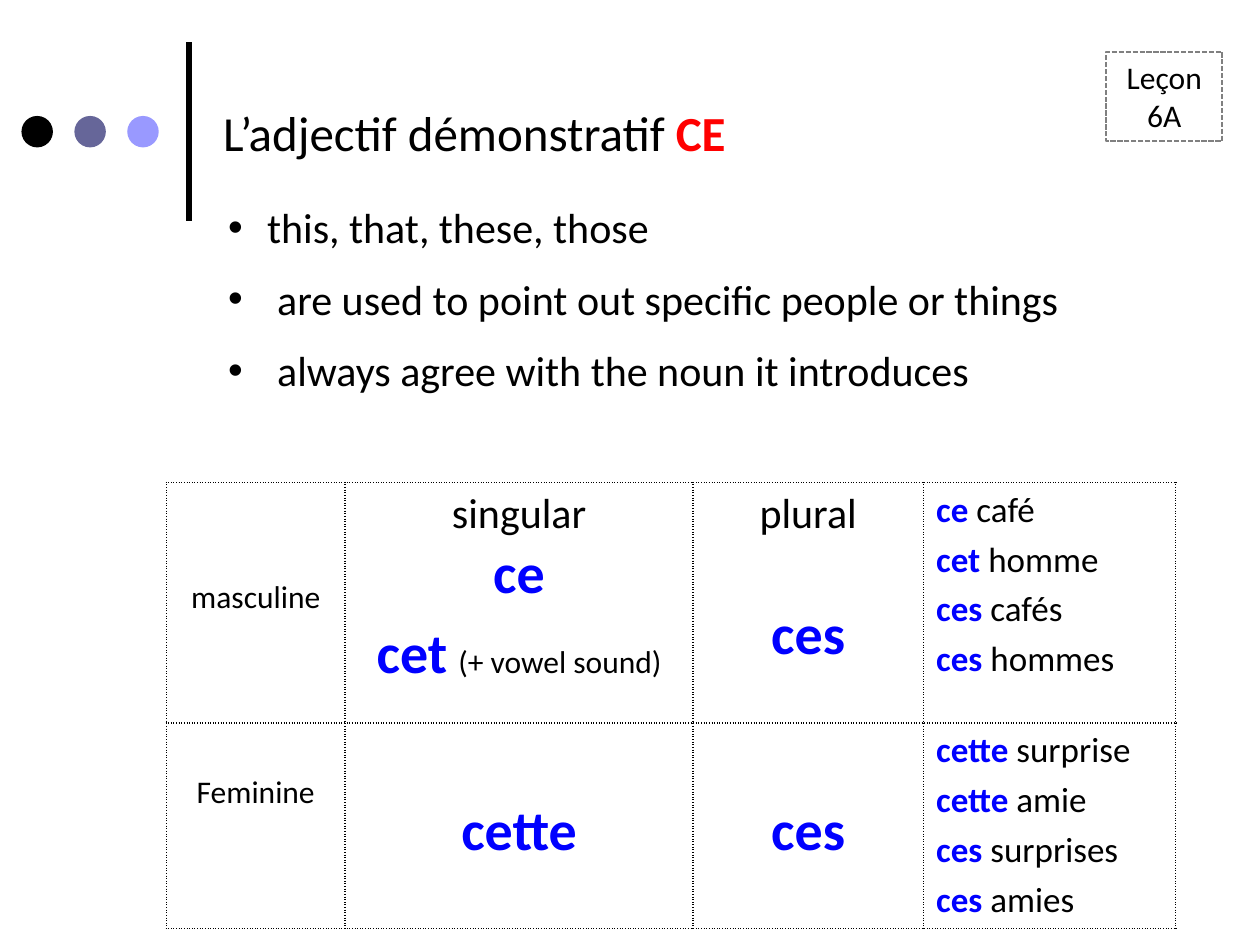
from dataclasses import dataclass

from lxml.etree import SubElement
from pptx import Presentation
from pptx.dml.color import RGBColor
from pptx.enum.dml import MSO_LINE
from pptx.enum.shapes import MSO_CONNECTOR, MSO_SHAPE
from pptx.enum.text import MSO_ANCHOR, MSO_AUTO_SIZE, PP_ALIGN
from pptx.oxml import parse_xml
from pptx.oxml.ns import nsdecls, qn
from pptx.util import Inches, Pt

COLUMNS, ROWS = 100, 75


@dataclass(frozen=True)
class Theme:
    font: str = "Calibri"
    ink: str = "000000"
    accent: str = "FF0000"
    form: str = "0000FF"
    frame: str = "808080"
    dots: tuple = ("000000", "666699", "9999FF")
    small: int = 18
    example: int = 20
    body: int = 24
    title: int = 28
    large: int = 32


@dataclass(frozen=True)
class Span:
    text: str
    size: float
    color: str = Theme.ink
    bold: bool = False


class Page:
    """Places elements on one slide; lengths are grid columns and rows."""

    def __init__(self, deck, theme):
        self.theme = theme
        self.column = deck.slide_width / COLUMNS
        self.row = deck.slide_height / ROWS
        self.slide = deck.slides.add_slide(deck.slide_layouts[1])
        self.shapes = self.slide.shapes

    def frame(self, left, top, width, height):
        return (round(left * self.column), round(top * self.row),
                round(width * self.column), round(height * self.row))

    def add_spans(self, para, spans, align=PP_ALIGN.LEFT, before=0):
        para.alignment = align
        para.space_before = Pt(before)
        for span in spans:
            run = para.add_run()
            run.text = span.text
            run.font.name = self.theme.font
            run.font.size = Pt(span.size)
            run.font.bold = span.bold
            run.font.color.rgb = RGBColor.from_string(span.color)

    def paragraphs(self, text_frame, count):
        """Return the given number of paragraphs, starting with the first one."""
        return [text_frame.paragraphs[0]] + [text_frame.add_paragraph() for _ in range(count - 1)]

    def place(self, box, area, anchor):
        box.left, box.top, box.width, box.height = self.frame(*area)
        box.text_frame.word_wrap = True
        box.text_frame.auto_size = MSO_AUTO_SIZE.NONE
        box.text_frame.vertical_anchor = anchor

    def title(self, area, spans):
        box = self.shapes.title
        self.place(box, area, MSO_ANCHOR.MIDDLE)
        self.add_spans(box.text_frame.paragraphs[0], spans)

    def bullets(self, area, items):
        """Fill the body placeholder with (text, hanging indent in inches) items."""
        box = self.slide.placeholders[1]
        self.place(box, area, MSO_ANCHOR.TOP)
        size = self.theme.body
        for para, (text, indent) in zip(self.paragraphs(box.text_frame, len(items)), items):
            self.add_spans(para, [Span(text, size)], before=size / 2)
            properties = para._p.get_or_add_pPr()
            properties.set("marL", str(Inches(indent)))
            properties.set("indent", str(-Inches(indent)))
            SubElement(properties, qn("a:buChar"), char="•")

    def line(self, start, end, width):
        left, top, _, _ = self.frame(*start, 0, 0)
        right, bottom, _, _ = self.frame(*end, 0, 0)
        rule = self.shapes.add_connector(MSO_CONNECTOR.STRAIGHT, left, top, right, bottom)
        rule.line.width = Pt(width)
        rule.line.color.rgb = RGBColor.from_string(self.theme.ink)
        SubElement(rule._element.spPr, qn("a:effectLst"))

    def dot(self, area, color):
        dot = self.shapes.add_shape(MSO_SHAPE.OVAL, *self.frame(*area))
        dot.shadow.inherit = False
        dot.fill.solid()
        dot.fill.fore_color.rgb = RGBColor.from_string(color)
        dot.line.fill.background()

    def badge(self, area, text):
        box = self.shapes.add_shape(MSO_SHAPE.RECTANGLE, *self.frame(*area))
        box.shadow.inherit = False
        box.fill.background()
        box.line.color.rgb = RGBColor.from_string(self.theme.frame)
        box.line.width = Pt(1)
        box.line.dash_style = MSO_LINE.SQUARE_DOT
        self.place(box, area, MSO_ANCHOR.TOP)
        self.add_spans(box.text_frame.paragraphs[0], [Span(text, self.theme.small)],
                       PP_ALIGN.CENTER)

    def border(self, cell):
        properties = cell._tc.get_or_add_tcPr()
        for place, side in enumerate("LRTB"):
            properties.insert(place, parse_xml(
                f'<a:ln{side} {nsdecls("a")} w="{Pt(1)}"><a:solidFill>'
                f'<a:srgbClr val="{self.theme.ink}"/></a:solidFill>'
                f'<a:prstDash val="dot"/></a:ln{side}>'))

    def table(self, left, top, widths, heights, cells):
        """Each cell is (top margin in inches, alignment, [(space before, spans)])."""
        area = self.frame(left, top, sum(widths), sum(heights))
        table = self.shapes.add_table(len(heights), len(widths), *area).table
        table.first_row = table.horz_banding = False
        for column, width in zip(table.columns, widths):
            column.width = round(width * self.column)
        for row, height in zip(table.rows, heights):
            row.height = round(height * self.row)
        for cell, (margin, align, lines) in zip(table.iter_cells(), cells):
            cell.fill.background()
            self.border(cell)
            cell.margin_top = Inches(margin)
            for para, (before, spans) in zip(self.paragraphs(cell.text_frame, len(lines)), lines):
                self.add_spans(para, spans, align, before)


def label(text, margin):
    return margin, PP_ALIGN.CENTER, [(0, [Span(text, Theme.small)])]


def form(text):
    return Span(text, Theme.large, Theme.form, True)


def examples(*pairs):
    size = Theme.example
    lines = [(size / 5, [Span(article + " ", size, Theme.form, True), Span(noun, size)])
             for article, noun in pairs]
    return 0.05, PP_ALIGN.LEFT, lines


def main():
    deck = Presentation()
    deck.slide_width, deck.slide_height = Inches(10), Inches(7.5)
    theme = Theme()
    page = Page(deck, theme)

    page.line((15, 17.5), (15, 3.3), 3)
    for place, color in enumerate(theme.dots):
        page.dot((1.7 + 4.2 * place, 9.2, 2.5, 2.5), color)
    page.badge((87.8, 4.1, 9.2, 7.1), "Leçon 6A")
    page.title((16.7, 6.7, 76.7, 7.6), [
        Span("L’adjectif démonstratif ", theme.title),
        Span("CE", theme.title, theme.accent, True)])
    page.bullets((17.1, 15.5, 75.8, 17.2), [
        ("this, that, these, those", 0.31),
        ("are used to point out specific people or things", 0.39),
        ("always agree with the noun it introduces", 0.39)])

    center = PP_ALIGN.CENTER
    singular = [(0, [Span("singular", theme.body)]),
                (0, [form("ce")]),
                (theme.large / 5, [form("cet"), Span(" ", theme.title),
                                   Span("(+ vowel sound)", theme.small)])]
    plural = [(0, [Span("plural", theme.body)]), (35, [form("ces")])]
    page.table(13.2, 38.3, (14.2, 27.6, 18.3, 20), (19.1, 16), [
        label("masculine", 0.76),
        (0.05, center, singular),
        (0.05, center, plural),
        examples(("ce", "café"), ("cet", "homme"), ("ces", "cafés"), ("ces", "hommes")),
        label("Feminine", 0.4),
        (0.59, center, [(0, [form("cette")])]),
        (0.59, center, [(0, [form("ces")])]),
        examples(("cette", "surprise"), ("cette", "amie"), ("ces", "surprises"), ("ces", "amies"))])

    deck.save("out.pptx")


if __name__ == "__main__":
    main()
